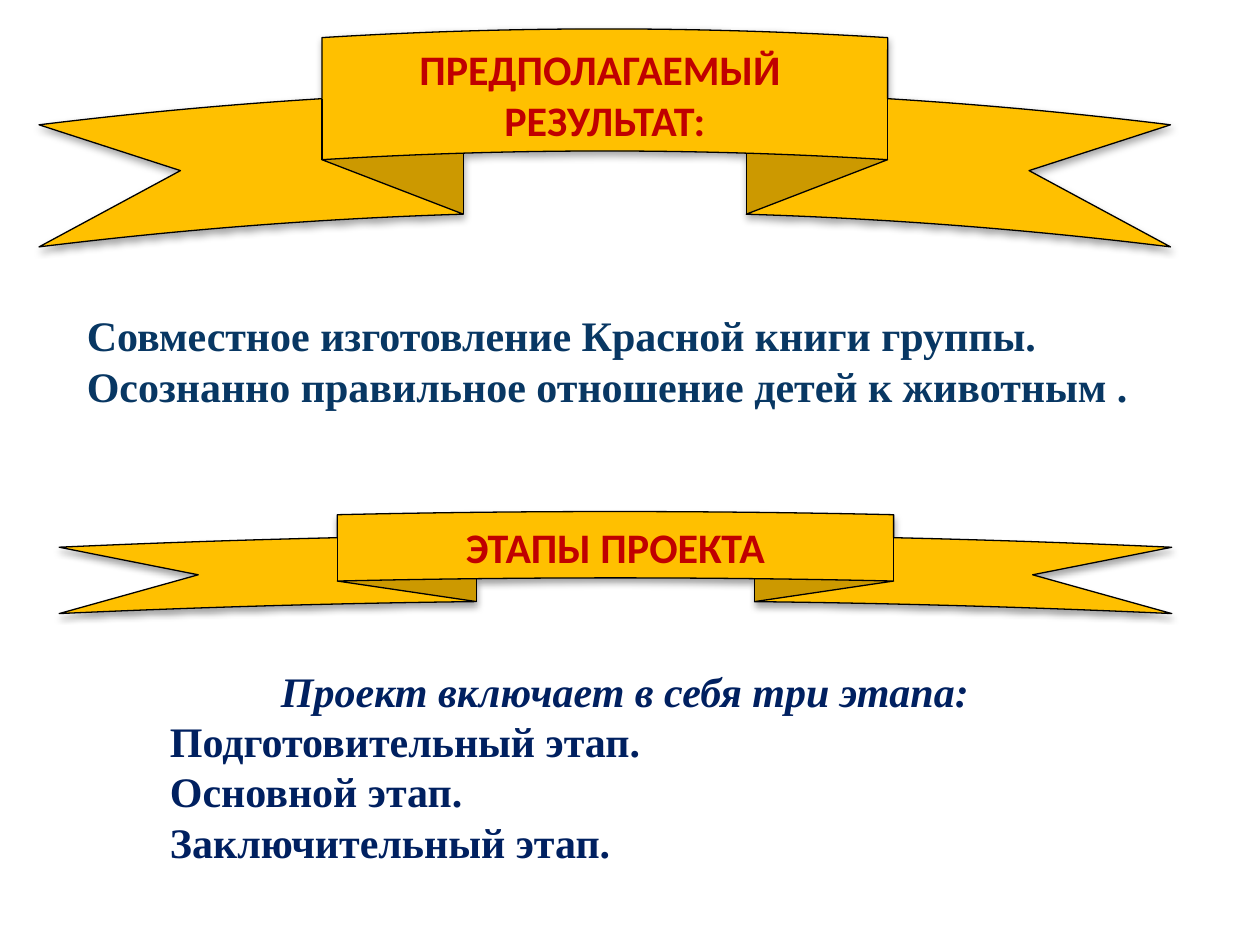
import lxml.etree
import pptx
import pptx.dml.color
import pptx.enum.shapes
import pptx.enum.text
import pptx.oxml.ns
import pptx.util
from pptx.util import Inches

COLOURS = {
    "ribbon": "FFC000",
    "outline": "000000",
    "heading": "C00000",
    "result": "083763",
    "stages": "002060",
}
ALIGN = pptx.enum.text.PP_ALIGN
ANCHOR = pptx.enum.text.MSO_ANCHOR


def colour(name):
    return pptx.dml.color.RGBColor.from_string(COLOURS[name])


def write_lines(shape, lines, font, colour_name, anchor):
    frame = shape.text_frame
    frame.word_wrap = True
    frame.auto_size = pptx.enum.text.MSO_AUTO_SIZE.SHAPE_TO_FIT_TEXT
    frame.vertical_anchor = anchor
    for index, (text, alignment, italic) in enumerate(lines):
        para = frame.paragraphs[0] if index == 0 else frame.add_paragraph()
        para.alignment = alignment
        span = para.add_run()
        span.text = text
        span.font.name = font
        span.font.size = pptx.util.Pt(24)
        span.font.bold = True
        span.font.italic = italic
        span.font.color.rgb = colour(colour_name)


def add_soft_shadow(shape):
    shape.shadow.inherit = False
    qn = pptx.oxml.ns.qn
    effects = shape._element.spPr.find(qn("a:effectLst"))
    shadow = lxml.etree.SubElement(
        effects, qn("a:outerShdw"), blurRad=str(pptx.util.Pt(4)),
        dist=str(pptx.util.Pt(2)), dir="5400000", rotWithShape="0")
    tint = lxml.etree.SubElement(shadow, qn("a:srgbClr"), val=COLOURS["outline"])
    lxml.etree.SubElement(tint, qn("a:alpha"), val="35000")


def add_ribbon(page, box, curve, lines, anchor):
    ribbon = page.shapes.add_shape(
        pptx.enum.shapes.MSO_SHAPE.CURVED_UP_RIBBON, *map(Inches, box))
    for index, value in enumerate((curve, 0.5, 0.125)):
        ribbon.adjustments[index] = value
    ribbon.fill.solid()
    ribbon.fill.fore_color.rgb = colour("ribbon")
    ribbon.line.color.rgb = colour("outline")
    ribbon.line.width = pptx.util.Pt(0.75)
    add_soft_shadow(ribbon)
    centred = [(line, ALIGN.CENTER, False) for line in lines]
    write_lines(ribbon, centred, "Calibri", "heading", anchor)


def add_body(page, box, lines, colour_name):
    body = page.shapes.add_textbox(*map(Inches, box))
    write_lines(body, lines, "Times New Roman", colour_name, ANCHOR.TOP)


def main():
    deck = pptx.Presentation()
    deck.slide_width, deck.slide_height = Inches(10), Inches(7.5)
    page = deck.slides.add_slide(deck.slide_layouts[6])

    add_ribbon(page, (0.31, 0.23, 8.98, 1.73), 0.44,
               ["ПРЕДПОЛАГАЕМЫЙ ", "РЕЗУЛЬТАТ:"], ANCHOR.TOP)
    add_ribbon(page, (0.47, 4.06, 8.83, 0.81), 0.35,
               ["ЭТАПЫ ПРОЕКТА"], ANCHOR.MIDDLE)
    add_body(page, (1.25, 5.23, 7.42, 1.72), [
        ("Проект включает в себя три этапа:", ALIGN.CENTER, True),
        ("Подготовительный этап.", ALIGN.LEFT, False),
        ("Основной этап.", ALIGN.LEFT, False),
        ("Заключительный этап.", ALIGN.LEFT, False),
    ], "stages")
    add_body(page, (0.59, 2.41, 8.98, 0.91), [
        ("Совместное изготовление Красной книги группы.", ALIGN.LEFT, False),
        ("Осознанно правильное отношение детей к животным .", ALIGN.LEFT, False),
    ], "result")

    deck.save("out.pptx")


if __name__ == "__main__":
    main()
